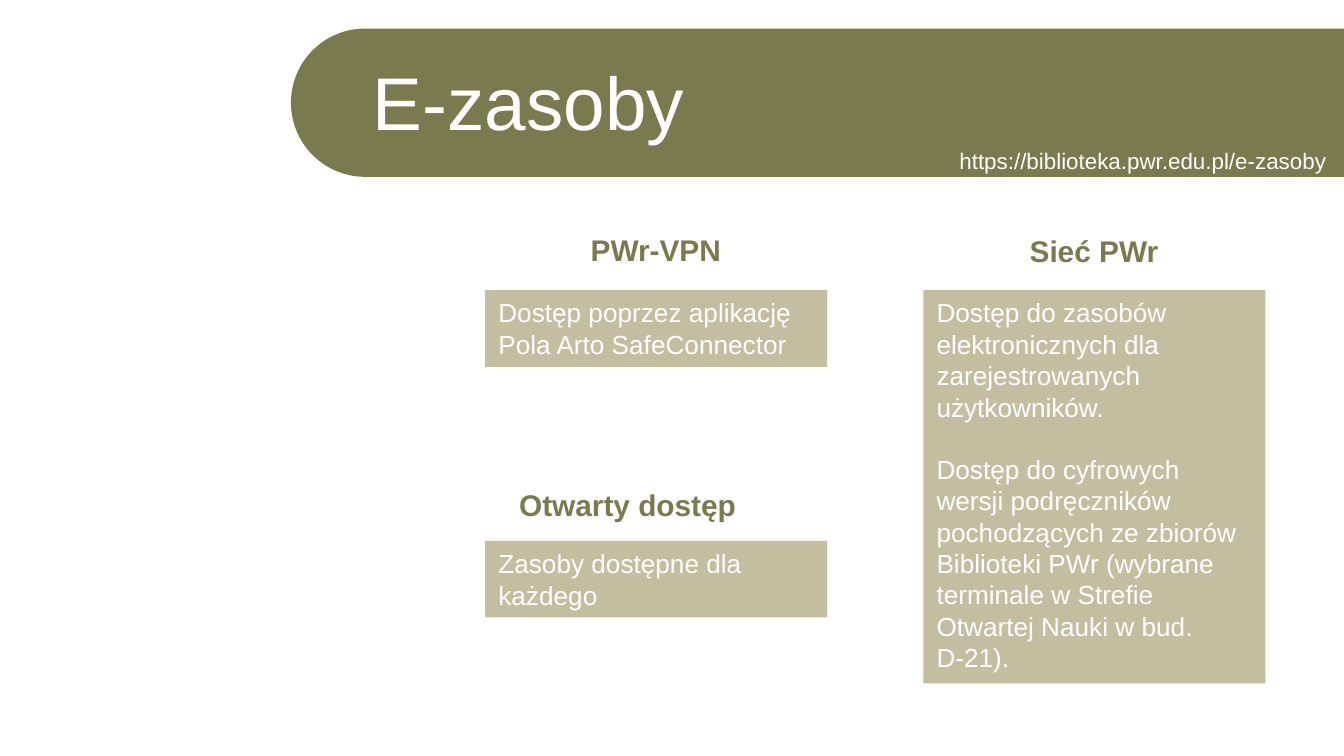
import math
import pptx
import pptx.util
import pptx.dml.color
import pptx.enum.shapes
import pptx.enum.text
import pptx.oxml.ns
import lxml.etree
from collections import namedtuple
from dataclasses import dataclass

Box = namedtuple("Box", "x y w h")


@dataclass(frozen=True)
class Theme:
    font: str = "Arial"
    olive: str = "797B4F"
    sand: str = "948A54"
    white: str = "FFFFFF"
    fade: int = 55
    title: int = 40
    head: int = 16
    body: int = 14
    link: int = 12
    gap: float = 16.5


THEME = Theme()
COLS, ROWS = 100, 56.25
CELL = pptx.util.Inches(10) // COLS


def grid(box):
    return [round(side * CELL) for side in box]


def rgb(code):
    return pptx.dml.color.RGBColor.from_string(code)


def write(shape, text, size, tint, bold=False, align="LEFT", mid=False):
    frame = shape.text_frame
    frame.text = text
    frame.word_wrap = True
    frame.auto_size = pptx.enum.text.MSO_AUTO_SIZE.NONE
    anchor = pptx.enum.text.MSO_ANCHOR
    frame.vertical_anchor = anchor.MIDDLE if mid else anchor.TOP
    for part in frame.paragraphs:
        part.alignment = pptx.enum.text.PP_ALIGN[align]
        for run in part.runs:
            run.font.name = THEME.font
            run.font.size = pptx.util.Pt(size)
            run.font.bold = bold
            run.font.color.rgb = rgb(tint)
    for part in frame.paragraphs[1:]:
        part.space_before = pptx.util.Pt(THEME.gap)


def paint(shape, tint):
    shape.shadow.inherit = False
    shape.fill.solid()
    shape.fill.fore_color.rgb = rgb(tint)
    shape.line.fill.background()


def label(slide, box, text, size, tint, **style):
    write(slide.shapes.add_textbox(*grid(box)), text, size, tint, **style)


def banner(slide, box, title, link):
    rad = box.h / 2
    turns = [math.pi * (0.5 + step / 60) for step in range(61)]
    curve = [grid((box.x + rad + rad * math.cos(turn),
                   box.y + rad - rad * math.sin(turn))) for turn in turns]
    right = box.x + box.w
    form = slide.shapes.build_freeform(*grid((right, box.y)))
    form.add_line_segments(curve + [grid((right, box.y + box.h))])
    band = form.convert_to_shape()
    paint(band, THEME.olive)
    head = slide.shapes.title
    head.element.addprevious(band.element)

    left = box.x + 5.1
    head.left, head.top, head.width, head.height = grid(
        Box(left, box.y + 2.2, right - left, 6.3))
    write(head, title, THEME.title, THEME.white, mid=True)
    label(slide, Box(right - 29.6, box.y + 8.3, 29.5, 3),
          link, THEME.link, THEME.white)


def card(slide, box, head, text, shift=3.5, lift=4.85):
    label(slide, Box(box.x + shift, box.y - lift, 18.4, 3),
          head, THEME.head, THEME.olive, bold=True, align="CENTER")
    panel = slide.shapes.add_shape(
        pptx.enum.shapes.MSO_SHAPE.RECTANGLE, *grid(box))
    paint(panel, THEME.sand)
    tone = panel.element.spPr.find(".//" + pptx.oxml.ns.qn("a:srgbClr"))
    lxml.etree.SubElement(tone, pptx.oxml.ns.qn("a:alpha"),
                          val=str(THEME.fade * 1000))
    write(panel, text, THEME.body, THEME.white)


def main():
    deck = pptx.Presentation()
    deck.slide_width = CELL * COLS
    deck.slide_height = round(CELL * ROWS)
    slide = deck.slides.add_slide(deck.slide_layouts[5])

    banner(slide, Box(21.65, 2.13, 78.35, 11.03), "E-zasoby",
           "https://biblioteka.pwr.edu.pl/e-zasoby")
    left, wide, step = 36.1, 25.45, 32.6
    card(slide, Box(left, 21.6, wide, 5.7), "PWr-VPN",
         "Dostęp poprzez aplikację Pola Arto SafeConnector")
    card(slide, Box(left + step, 21.6, wide, 29.25), "Sieć PWr",
         "Dostęp do zasobów elektronicznych dla zarejestrowanych "
         "użytkowników.\n"
         "Dostęp do cyfrowych wersji podręczników pochodzących ze zbiorów "
         "Biblioteki PWr (wybrane terminale w Strefie Otwartej Nauki "
         "w bud.\vD-21).", lift=4.8)
    card(slide, Box(left, 40.25, wide, 5.7), "Otwarty dostęp",
         "Zasoby dostępne dla każdego", shift=1.4, lift=4.5)
    deck.save("out.pptx")


if __name__ == "__main__":
    main()
